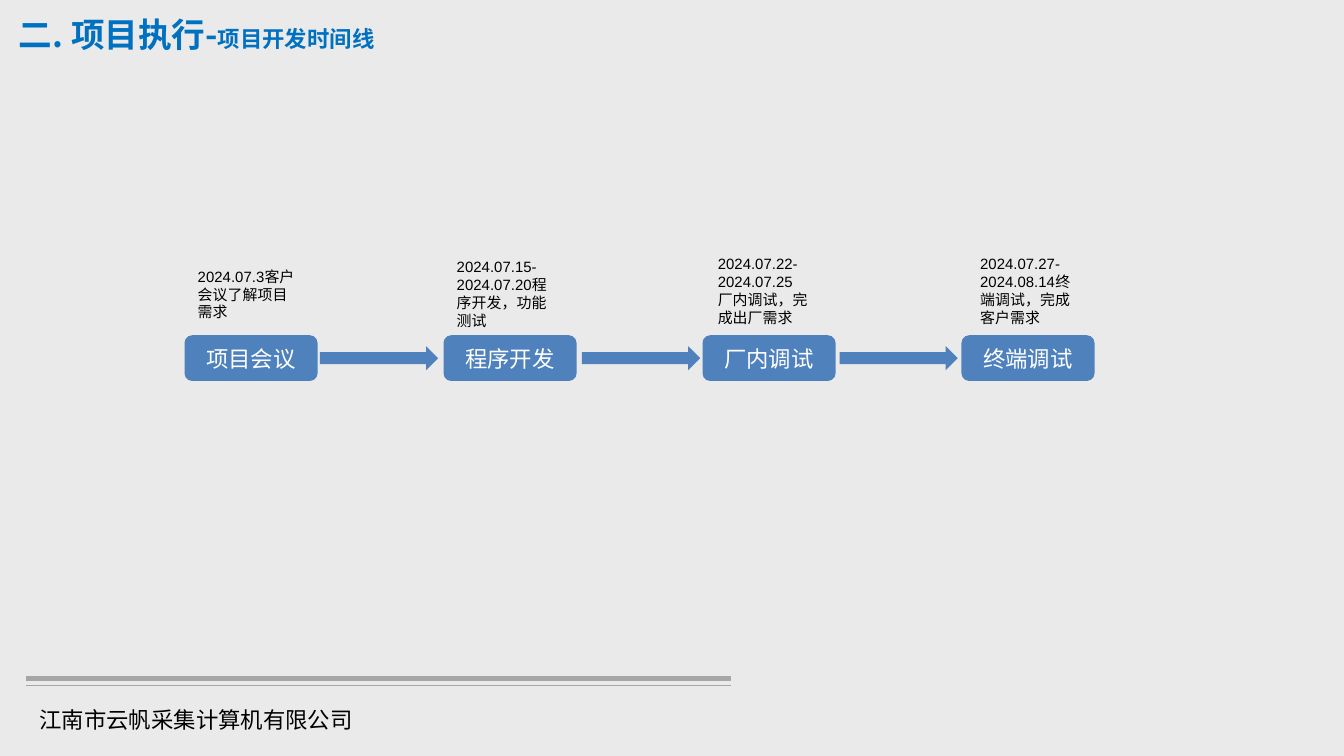
import dataclasses
import typing

import lxml.etree
import pptx
import pptx.dml.color
import pptx.enum.shapes
import pptx.enum.text
import pptx.oxml.ns
import pptx.util

SHAPES = pptx.enum.shapes.MSO_SHAPE
ALIGN = pptx.enum.text.PP_ALIGN
ANCHOR = pptx.enum.text.MSO_ANCHOR


@dataclasses.dataclass(frozen=True)
class Theme:
    backdrop: str = "EAEAEA"
    rule: str = "A6A6A6"
    accent: str = "4F81BD"
    heading: str = "0070C0"
    ink: str = "000000"
    paper: str = "FFFFFF"
    chinese: str = "Noto Sans CJK SC"
    latin: str = "Arial"
    title_size: float = 18
    body_size: float = 12
    note_size: float = 8


@dataclasses.dataclass(frozen=True)
class Area:
    column: float
    row: float
    columns: float
    rows: float


@dataclasses.dataclass(frozen=True)
class Stage:
    label: str
    note: tuple[str, ...]
    note_shift: float
    note_row: float
    arrow_shift: float = 10.2
    note_rows: float = 6


THEME = Theme()
COLUMNS, ROWS = 100, 56.25
SLIDE_WIDTH = pptx.util.Inches(10)
SLIDE_HEIGHT = SLIDE_WIDTH * 9 // 16

FIRST_COLUMN, STAGE_PITCH = 13.73, 19.27
STAGE_ROW, STAGE_COLUMNS, STAGE_ROWS = 24.95, 9.9, 3.4
ARROW_COLUMNS, ARROW_ROWS = 8.8, 1.8
NOTE_COLUMNS = 9.5

STAGES = (
    Stage("项目会议", ("2024.07.3客户会议了解项目需求",), 0, 19.4, 10.07, 4.6),
    Stage("程序开发", ("2024.07.15-2024.07.20程序开发，功能测试",), 0, 18.7, 10.3),
    Stage("厂内调试", ("2024.07.22-2024.07.25", "厂内调试，完成出厂需求"), 0.15, 18.45),
    Stage("终端调试", ("2024.07.27-2024.08.14终端调试，完成客户需求",), 0.4, 18.45),
)


def across(columns: float) -> int:
    return round(SLIDE_WIDTH * columns / COLUMNS)


def down(rows: float) -> int:
    return round(SLIDE_HEIGHT * rows / ROWS)


def box(area: Area) -> tuple[int, int, int, int]:
    return across(area.column), down(area.row), across(area.columns), down(area.rows)


def color(value: str) -> pptx.dml.color.RGBColor:
    return pptx.dml.color.RGBColor.from_string(value)


def apply(target: typing.Any, values: dict[str, typing.Any]) -> None:
    for name, value in values.items():
        setattr(target, name, value)


def add_run(paragraph: typing.Any, text: str, size: float, ink: str,
            latin: str = THEME.chinese, bold: bool = False) -> None:
    run = paragraph.add_run()
    run.text = text
    apply(run.font, {"name": latin, "size": pptx.util.Pt(size), "bold": bold})
    run.font.color.rgb = color(ink)
    east_asian = lxml.etree.SubElement(run.font._element, pptx.oxml.ns.qn("a:ea"))
    east_asian.set("typeface", THEME.chinese)


def add_block(slide: typing.Any, kind: SHAPES, area: Area, fill: str) -> typing.Any:
    shape = slide.shapes.add_shape(kind, *box(area))
    shape.shadow.inherit = False
    shape.fill.solid()
    shape.fill.fore_color.rgb = color(fill)
    shape.line.fill.background()
    return shape


def add_text(slide: typing.Any, area: Area, lines: tuple[str, ...],
             size: float, latin: str, top_margin: float = 0.5) -> None:
    frame = slide.shapes.add_textbox(*box(area)).text_frame
    apply(frame, {"word_wrap": True, "margin_top": down(top_margin)})
    for index, line in enumerate(lines):
        paragraph = frame.add_paragraph() if index else frame.paragraphs[0]
        add_run(paragraph, line, size, THEME.ink, latin)


def add_rule(slide: typing.Any, row: float, weight: float) -> None:
    connector = slide.shapes.add_connector(
        pptx.enum.shapes.MSO_CONNECTOR.STRAIGHT,
        across(1.95), down(row), across(54.4), down(row))
    connector.line.color.rgb = color(THEME.rule)
    connector.line.width = pptx.util.Pt(weight)
    lxml.etree.SubElement(connector.element.spPr, pptx.oxml.ns.qn("a:effectLst"))


def add_title(slide: typing.Any) -> None:
    title = slide.shapes.title
    left, top, width, height = box(Area(0.4, 0.55, 29.1, 4.1))
    apply(title, {"left": left, "top": top, "width": width, "height": height})
    apply(title.text_frame, {
        "word_wrap": True,
        "vertical_anchor": ANCHOR.TOP,
        "auto_size": pptx.enum.text.MSO_AUTO_SIZE.NONE,
    })
    paragraph = title.text_frame.paragraphs[0]
    paragraph.alignment = ALIGN.LEFT
    add_run(paragraph, "二. 项目执行-", THEME.title_size, THEME.heading, bold=True)
    add_run(paragraph, "项目开发时间线", THEME.body_size, THEME.heading, bold=True)
    title.element.getparent().append(title.element)


def add_stage(slide: typing.Any, stage: Stage, column: float) -> None:
    area = Area(column, STAGE_ROW, STAGE_COLUMNS, STAGE_ROWS)
    shape = add_block(slide, SHAPES.ROUNDED_RECTANGLE, area, THEME.accent)
    shape.text_frame.vertical_anchor = ANCHOR.MIDDLE
    paragraph = shape.text_frame.paragraphs[0]
    paragraph.alignment = ALIGN.CENTER
    add_run(paragraph, stage.label, THEME.body_size, THEME.paper)
    note = Area(column + stage.note_shift, stage.note_row, NOTE_COLUMNS, stage.note_rows)
    add_text(slide, note, stage.note, THEME.note_size, THEME.latin)


def add_timeline(slide: typing.Any) -> None:
    arrow_row = STAGE_ROW + (STAGE_ROWS - ARROW_ROWS) / 2
    for index, stage in enumerate(STAGES):
        column = FIRST_COLUMN + index * STAGE_PITCH
        add_stage(slide, stage, column)
        if index < len(STAGES) - 1:
            arrow = Area(column + stage.arrow_shift, arrow_row, ARROW_COLUMNS, ARROW_ROWS)
            add_block(slide, SHAPES.RIGHT_ARROW, arrow, THEME.accent)


def main() -> None:
    presentation = pptx.Presentation()
    apply(presentation, {"slide_width": SLIDE_WIDTH, "slide_height": SLIDE_HEIGHT})
    slide = presentation.slides.add_slide(presentation.slide_layouts[5])
    add_block(slide, SHAPES.RECTANGLE, Area(0, 0, COLUMNS, ROWS), THEME.backdrop)
    for row, weight in ((50.5, 2.75), (51, 0.75)):
        add_rule(slide, row, weight)
    add_text(slide, Area(1.95, 51.7, 52.2, 3.4), ("江南市云帆采集计算机有限公司",),
             THEME.body_size, THEME.chinese, top_margin=0.85)
    add_title(slide)
    add_timeline(slide)
    presentation.save("out.pptx")


if __name__ == "__main__":
    main()
